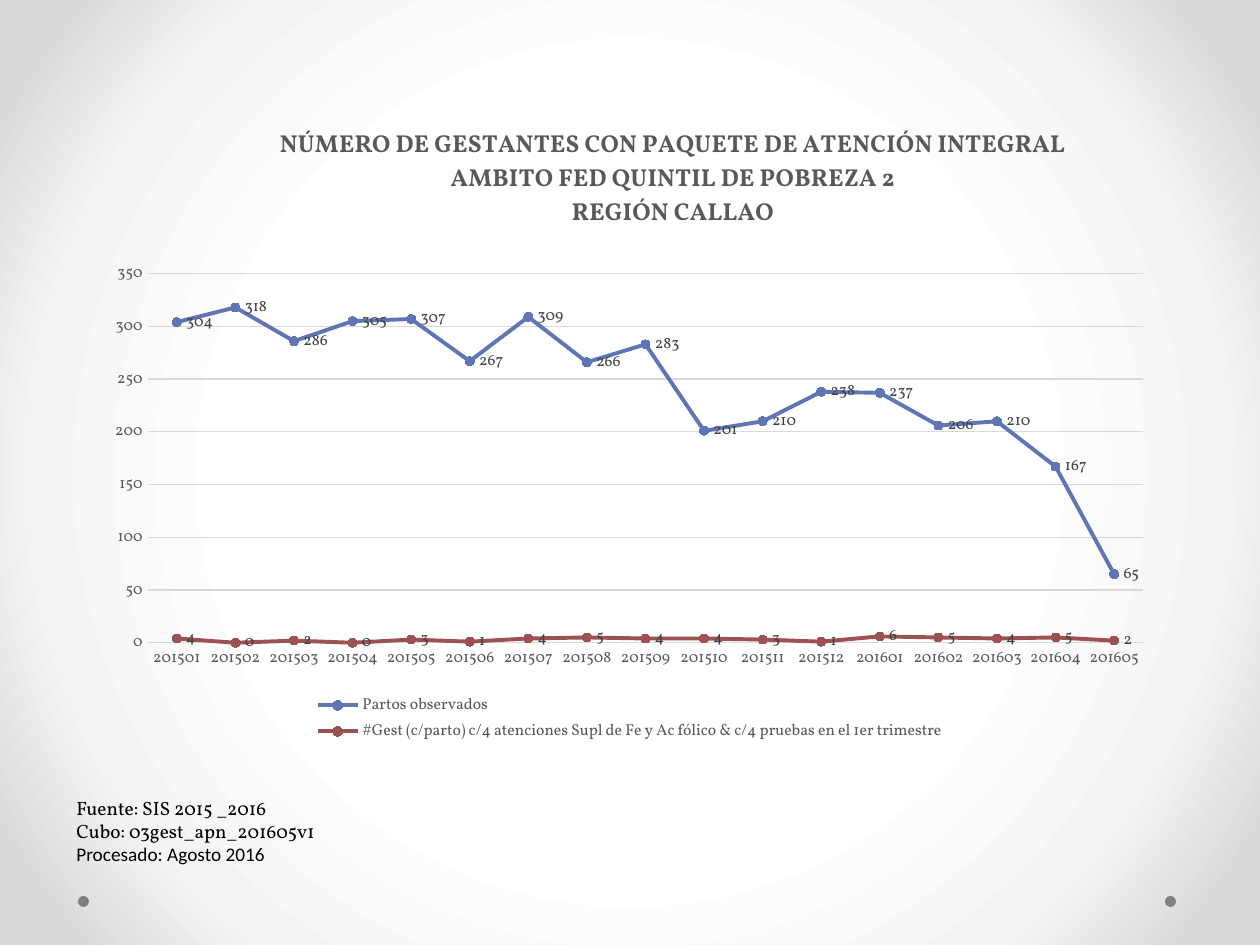
from pptx import Presentation
from pptx import util as u
from pptx.chart.data import CategoryChartData
from pptx.dml.color import RGBColor
from pptx.enum import chart as ch, shapes, text
from pptx.oxml import parse_xml
from pptx.oxml.ns import nsdecls

SCALE = 914400 / 126
FONT = "Vollkorn"
BLACK = RGBColor(0x00, 0x00, 0x00)
DARK = RGBColor(0x40, 0x40, 0x40)
GRAY = RGBColor(0x59, 0x59, 0x59)
DOT = RGBColor(0x80, 0x80, 0x80)
RULE = RGBColor(0xD9, 0xD9, 0xD9)
BLUE = RGBColor(0x60, 0x76, 0xB4)
RED = RGBColor(0x9C, 0x52, 0x52)
WHITE = RGBColor(0xFF, 0xFF, 0xFF)
PALE = RGBColor(0xF4, 0xF4, 0xF4)
EDGE = RGBColor(0xDA, 0xDA, 0xDA)
STOPS = [(50, WHITE), (76, PALE), (92, EDGE)]

MONTHS = [f"2015{m:02d}" for m in range(1, 13)] + [f"2016{m:02d}" for m in range(1, 6)]
SERIES = [
    ("Partos observados", BLUE,
     [304, 318, 286, 305, 307, 267, 309, 266, 283, 201, 210, 238, 237, 206, 210, 167, 65]),
    ("#Gest (c/parto) c/4 atenciones Supl de Fe y Ac fólico & c/4 pruebas en el 1er trimestre", RED,
     [4, 0, 2, 0, 3, 1, 4, 5, 4, 4, 3, 1, 6, 5, 4, 5, 2]),
]
TITLE = [
    "NÚMERO DE GESTANTES CON PAQUETE DE ATENCIÓN INTEGRAL",
    "AMBITO FED QUINTIL DE POBREZA 2",
    "REGIÓN CALLAO",
]
NOTES = [
    ("Fuente: SIS 2015 _2016", FONT),
    ("Cubo: 03gest_apn_201605v1", FONT),
    ("Procesado: Agosto 2016", "Calibri"),
]


def px(*vals):
    """Turn pixel lengths into EMU."""
    return [u.Emu(round(v * SCALE)) for v in vals]


def style(font, size=9, color=GRAY, name=FONT, bold=False):
    """Set the look of a font."""
    font.size, font.name, font.bold = u.Pt(size), name, bold
    font.color.rgb = color


def write(frame, line, first=False, align=None, **look):
    """Put one line of text into a frame as a paragraph."""
    para = frame.paragraphs[0] if first else frame.add_paragraph()
    para.alignment = align
    run = para.add_run()
    run.text = line
    style(run.font, **look)


def paint(slide):
    """Give the slide its round gradient."""
    stops = "".join(
        f'<a:gs pos="{pos * 1000}"><a:srgbClr val="{color}"/></a:gs>' for pos, color in STOPS)
    slide.element.cSld.insert(0, parse_xml(
        f'<p:bg {nsdecls("p", "a")}><p:bgPr><a:gradFill rotWithShape="1"><a:gsLst>{stops}</a:gsLst>'
        '<a:path path="circle"><a:fillToRect l="50000" t="50000" r="50000" b="50000"/></a:path>'
        '</a:gradFill><a:effectLst/></p:bgPr></p:bg>'))


def dot(slide, left, top, size):
    """Draw a plain gray dot."""
    shape = slide.shapes.add_shape(shapes.MSO_SHAPE.OVAL, *px(left, top, size, size))
    shape.shadow.inherit = False
    shape.fill.solid()
    shape.fill.fore_color.rgb = DOT
    shape.line.fill.background()


def notes(slide):
    """Write the source lines under the chart."""
    frame = slide.shapes.add_textbox(*px(64, 790, 377, 83)).text_frame
    frame.word_wrap = True
    frame.auto_size = text.MSO_AUTO_SIZE.SHAPE_TO_FIT_TEXT
    for i, (line, name) in enumerate(NOTES):
        write(frame, line, first=i == 0, size=11, color=BLACK, name=name)


def layout(**spots):
    """Build a manual chart layout from fractions of the chart."""
    inner = '<c:layoutTarget val="inner"/>' if "w" in spots else ""
    modes = "".join(f'<c:{key}Mode val="edge"/>' for key in "xy")
    vals = "".join(f'<c:{key} val="{val}"/>' for key, val in spots.items())
    return parse_xml(f'<c:layout {nsdecls("c")}><c:manualLayout>{inner}{modes}{vals}'
                     '</c:manualLayout></c:layout>')


def place(part, spot):
    """Replace the layout of a chart part."""
    for old in part.xpath("c:layout"):
        part.remove(old)
    texts = part.xpath("c:tx")
    part.insert(part.index(texts[0]) + 1 if texts else 0, spot)


def axes(chart):
    """Format both axes and the grid."""
    for axis in (chart.category_axis, chart.value_axis):
        axis.major_tick_mark = axis.minor_tick_mark = ch.XL_TICK_MARK.NONE
        style(axis.tick_labels.font)
    line = chart.category_axis.format.line
    grid = chart.value_axis.major_gridlines.format.line
    for rule in (line, grid):
        rule.color.rgb, rule.width = RULE, u.Pt(0.75)
    axis = chart.value_axis
    axis.format.line.fill.background()
    axis.minimum_scale, axis.maximum_scale, axis.major_unit = 0, 350, 50
    axis.tick_labels.number_format = "0"
    axis.tick_labels.number_format_is_linked = False


def curve(plot, color):
    """Format one series with its markers and labels."""
    plot.smooth = False
    plot.format.line.color.rgb, plot.format.line.width = color, u.Pt(2.25)
    mark = plot.marker
    mark.style, mark.size = ch.XL_MARKER_STYLE.CIRCLE, 5
    mark.format.fill.solid()
    mark.format.fill.fore_color.rgb = mark.format.line.color.rgb = color
    tags = plot.data_labels
    tags.show_value = True
    tags.position = ch.XL_LABEL_POSITION.RIGHT
    tags.number_format, tags.number_format_is_linked = "0", False
    style(tags.font, color=DARK)


def graph(slide):
    """Add the line chart with its title and legend."""
    data = CategoryChartData(number_format="0")
    data.categories = MONTHS
    for name, _, vals in SERIES:
        data.add_series(name, vals)
    chart = slide.shapes.add_chart(
        ch.XL_CHART_TYPE.LINE_MARKERS, *px(94, 116, 1071, 631), data).chart
    style(chart.font, size=10, color=BLACK)
    chart.has_title = True
    title = chart.chart_title
    for i, line in enumerate(TITLE):
        write(title.text_frame, line, first=i == 0, align=text.PP_ALIGN.CENTER,
              size=14, bold=True)
    title.include_in_layout = False
    place(title._element, layout(x=0.17, y=0.01))
    chart.has_legend = True
    chart.legend.position = ch.XL_LEGEND_POSITION.BOTTOM
    chart.legend.include_in_layout = False
    style(chart.legend.font)
    axes(chart)
    chart.plots[0].vary_by_categories = False
    for plot, (_, color, _) in zip(chart.plots[0].series, SERIES):
        curve(plot, color)
    area = chart._chartSpace.chart.plotArea
    place(area, layout(x=0.05, y=0.25, w=0.93, h=0.585))


def main():
    """Build and save the slide."""
    deck = Presentation()
    deck.slide_width, deck.slide_height = px(1260, 945)
    slide = deck.slides.add_slide(deck.slide_layouts[6])
    paint(slide)
    for left in (1165, 78):
        dot(slide, left, 896, 11)
    notes(slide)
    graph(slide)
    deck.save("out.pptx")


if __name__ == "__main__":
    main()
